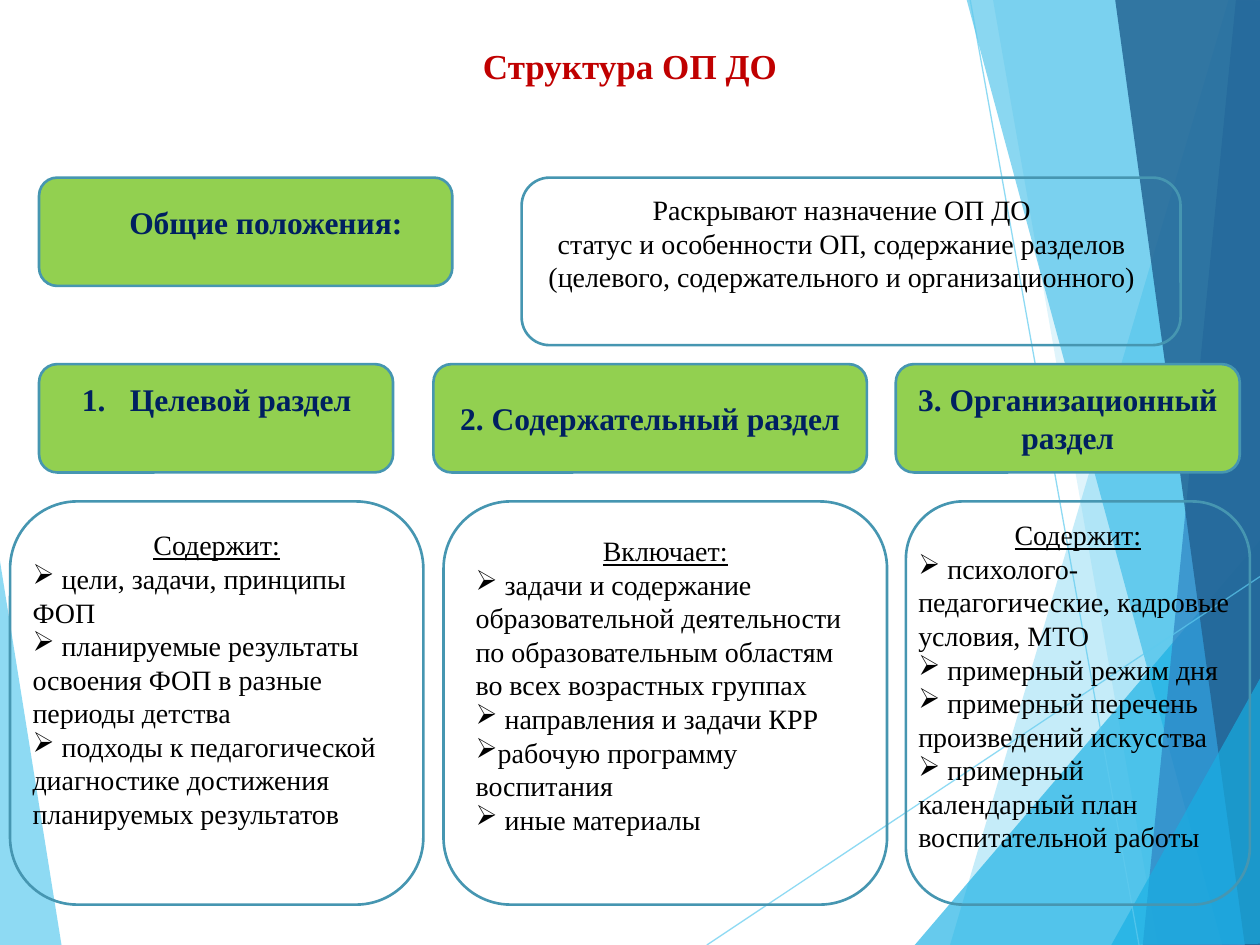
from lxml import etree
from pptx import Presentation, util as u
from pptx.dml import color
from pptx.enum import shapes, text
from pptx.oxml import ns

HUES = {
    "sky": "5FCBEF", "cyan": "17B0E4", "blue": "2E83C3", "deep": "226292",
    "green": "92D050", "edge": "4696B1", "red": "C00000", "navy": "002060",
    "black": "000000",
}
FONT = "Times New Roman"
PANES = [
    ("sky", 70, [(-0.01, 4.39), (0.49, 7.51), (-0.01, 7.5)]),
    ("sky", 36, [(9.75, 0), (7.54, 7.5), (10.02, 7.51), (10.01, 0.01)]),
    ("sky", 20, [(7.88, -0.01), (9.19, 7.5), (10.01, 7.5), (10.01, -0.01)]),
    ("cyan", 66, [(7.26, 7.5), (10, 4.29), (10.01, 7.5)]),
    ("cyan", 50, [(7.67, -0.01), (9.7, 7.5), (10.01, 7.49), (10.01, -0.01)]),
    ("blue", 70, [(9.81, -0.01), (9.07, 7.5), (10.01, 7.5), (10, -0.01)]),
    ("deep", 82, [(8.85, -0.01), (9.88, 7.5), (10.02, 7.5), (10, -0.01)]),
    ("cyan", 66, [(8.82, 7.5), (10.02, 5.35), (10.02, 7.49)]),
]
RAYS = [(5.61, 7.5, 10.01, 4.57), (7.7, 0, 9.04, 7.5)]
AIMS = [
    "Содержит:",
    " цели, задачи, принципы ФОП",
    " планируемые результаты освоения ФОП в разные периоды детства",
    " подходы к педагогической диагностике достижения планируемых результатов",
]
PARTS = [
    "Включает:",
    " задачи и содержание образовательной деятельности по образовательным "
    "областям во всех возрастных группах",
    " направления и задачи КРР",
    "рабочую программу воспитания",
    " иные материалы",
]
TERMS = [
    "Содержит:",
    " психолого-педагогические, кадровые условия, МТО",
    " примерный режим дня",
    " примерный перечень произведений искусства",
    " примерный календарный план воспитательной работы",
]
SCOPE = [
    "Раскрывают назначение ОП ДО",
    "статус и особенности ОП, содержание разделов "
    "(целевого, содержательного и организационного)",
]


def tint(name):
    """Return the named colour."""
    return color.RGBColor.from_string(HUES[name])


def fade(shape, part):
    """Set the opacity of the shape's colour in percent."""
    for hue in shape._element.spPr.iter(ns.qn("a:srgbClr")):
        etree.SubElement(hue, ns.qn("a:alpha"), val=str(part * 1000))


def add_pane(slide, hue, part, spots):
    """Draw a translucent polygon."""
    pts = [(u.Inches(x), u.Inches(y)) for x, y in spots]
    form = slide.shapes.build_freeform(*pts[0])
    form.add_line_segments(pts[1:], close=True)
    pane = form.convert_to_shape()
    pane.shadow.inherit = False
    pane.fill.solid()
    pane.fill.fore_color.rgb = tint(hue)
    pane.line.fill.background()
    fade(pane, part)


def add_ray(slide, ends):
    """Draw a thin translucent line."""
    ray = slide.shapes.add_connector(
        shapes.MSO_CONNECTOR.STRAIGHT, *map(u.Inches, ends))
    ray.line.color.rgb = tint("sky")
    ray.line.width = u.Pt(0.75)
    fade(ray, 70)
    etree.SubElement(ray._element.spPr, ns.qn("a:effectLst"))


def add_card(slide, area, hue=None):
    """Draw a rounded card, filled if a colour is given."""
    card = slide.shapes.add_shape(
        shapes.MSO_SHAPE.ROUNDED_RECTANGLE, *map(u.Inches, area))
    card.shadow.inherit = False
    if hue:
        card.fill.solid()
        card.fill.fore_color.rgb = tint(hue)
    else:
        card.fill.background()
    card.line.color.rgb = tint("edge")
    card.line.width = u.Pt(1.5)
    return card


def add_box(slide, area):
    """Add an empty text box."""
    return slide.shapes.add_textbox(*map(u.Inches, area))


def mark(para, tag, indent=0, **attrs):
    """Give the paragraph a bullet or a number."""
    prop = para._p.get_or_add_pPr()
    prop.set("marL", str(u.Inches(indent)))
    prop.set("indent", str(-u.Inches(indent)))
    etree.SubElement(prop, ns.qn(tag), **attrs)


def style(para, size, hue, bold=False, line=False, left=False):
    """Set the paragraph's font and alignment."""
    para.alignment = text.PP_ALIGN.LEFT if left else text.PP_ALIGN.CENTER
    font = para.font
    font.name, font.size = FONT, u.Pt(size)
    font.bold, font.underline = bold, line
    font.color.rgb = tint(hue)


def write(shape, lines):
    """Fill the shape with lines and return its paragraphs."""
    frame = shape.text_frame
    frame.word_wrap = True
    frame.text = "\n".join(lines)
    return frame.paragraphs


def write_head(shape, words, size=18, hue="navy", number=False):
    """Write a bold centred heading."""
    para = write(shape, [words])[0]
    if number:
        mark(para, "a:buAutoNum", 0.38, type="arabicPeriod")
    style(para, size, hue, bold=True)


def write_list(shape, lines):
    """Write an underlined caption over a bulleted list."""
    first, *rest = write(shape, lines)
    style(first, 16, "black", line=True)
    for para in rest:
        mark(para, "a:buChar", char="➢")
        style(para, 16, "black", left=True)


def add_title(slide, words):
    """Place and write the slide title."""
    head = slide.shapes.title
    head.left, head.top, head.width, head.height = map(
        u.Inches, (0.5, 0.3, 9, 0.95))
    write_head(head, words, 20, "red")
    head.text_frame.auto_size = text.MSO_AUTO_SIZE.NONE
    head.text_frame.vertical_anchor = text.MSO_ANCHOR.TOP


def main():
    """Build the slide and save it."""
    deck = Presentation()
    deck.slide_width, deck.slide_height = u.Inches(10), u.Inches(7.5)
    slide = deck.slides.add_slide(deck.slide_layouts[5])
    for pane in PANES:
        add_pane(slide, *pane)
    for ray in RAYS:
        add_ray(slide, ray)
    add_title(slide, "Структура ОП ДО")

    add_card(slide, (0.31, 1.41, 3.28, 0.86), "green")
    write_head(add_box(slide, (0.55, 1.56, 3.12, 0.4)), "Общие положения:")
    add_card(slide, (4.14, 1.41, 5.23, 1.33))
    for para in write(add_box(slide, (4.14, 1.48, 5.08, 0.91)), SCOPE):
        style(para, 16, "black")

    heads = [add_card(slide, (x, 2.89, w, 0.86), "green")
             for x, w in [(0.31, 2.81), (3.44, 3.44), (7.11, 2.73)]]
    cards = [add_card(slide, (x, 3.98, w, 3.2))
             for x, w in [(0.08, 3.28), (3.52, 3.52), (7.19, 2.73)]]
    write_head(add_box(slide, (0.39, 2.97, 2.66, 0.4)),
               "Целевой раздел", number=True)
    write_head(heads[1], "2. Содержательный раздел")
    write_head(heads[2], "3. Организационный раздел")
    write_list(add_box(slide, (0.16, 4.14, 3.12, 2.52)), AIMS)
    cards[1].text_frame.margin_bottom = u.Inches(0.34)
    write_list(cards[1], PARTS)
    write_list(add_box(slide, (7.19, 4.06, 2.73, 3.1)), TERMS)
    deck.save("out.pptx")


if __name__ == "__main__":
    main()
